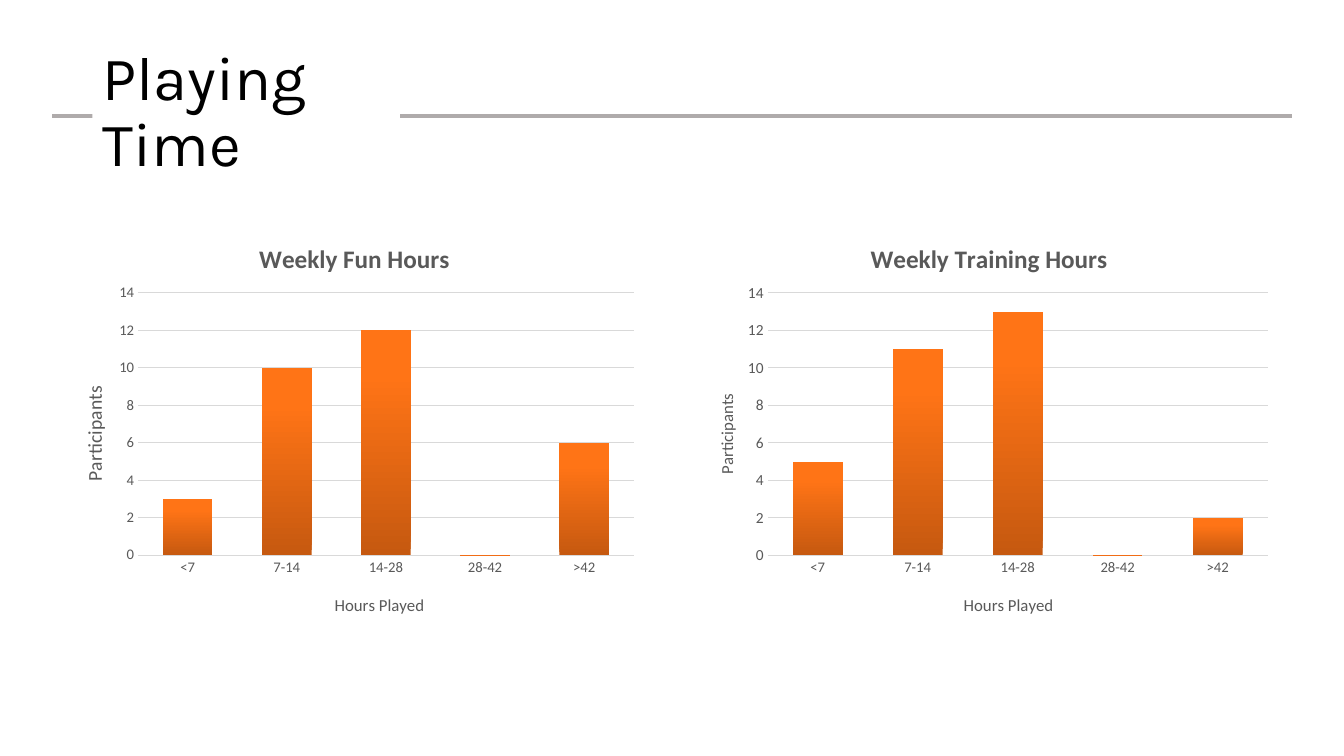
from pptx import Presentation
from pptx.chart.data import CategoryChartData
from pptx.dml.color import RGBColor
from pptx.enum.chart import XL_CHART_TYPE as ChartType, XL_TICK_MARK as TickMark
from pptx.enum.shapes import MSO_CONNECTOR as Connector
from pptx.enum.text import MSO_ANCHOR as Anchor, MSO_AUTO_SIZE as AutoSize, PP_ALIGN as Align
from pptx.oxml import parse_xml
from pptx.oxml.ns import nsdecls, qn
from pptx.util import Pt

GREY = "595959"
GRID = "D9D9D9"
HOURS = ["<7", "7-14", "14-28", "28-42", ">42"]
BAR_STOPS = [(0, "C65910"), (80, "FF7416"), (100, "FF7517")]


def color(hex_text):
    return RGBColor.from_string(hex_text)


def style_font(font, size, hex_text, name="Calibri", bold=False):
    font.name, font.size, font.bold = name, Pt(size), bold
    font.color.rgb = color(hex_text)


def layout_xml(x, y, width=None, height=None):
    """Manual chart layout, in fractions of the chart's size."""
    target = '<c:layoutTarget val="inner"/>' if width else ""
    values = [("x", x), ("y", y), ("w", width), ("h", height)]
    sizes = "".join(f'<c:{key} val="{value}"/>' for key, value in values if value is not None)
    modes = '<c:xMode val="edge"/><c:yMode val="edge"/>'
    return parse_xml(f'<c:layout {nsdecls("c")}><c:manualLayout>{target}{modes}{sizes}'
                     '</c:manualLayout></c:layout>')


def remove_layout(element):
    old = element.find(qn("c:layout"))
    if old is not None:
        element.remove(old)


def set_chart_text(title, text, size, place, bold=False):
    title.text_frame.text = text
    style_font(title.text_frame.paragraphs[0].font, size, GREY, bold=bold)
    element = title.text_frame._txBody.getparent().getparent()
    remove_layout(element)
    element.find(qn("c:tx")).addnext(layout_xml(*place))


def fill_bars(series):
    stops = "".join(f'<a:gs pos="{pos * 1000}"><a:srgbClr val="{hex_text}"/></a:gs>'
                    for pos, hex_text in BAR_STOPS)
    series.invert_if_negative = False
    series._element.get_or_add_spPr().append(parse_xml(
        f'<a:gradFill {nsdecls("a")}><a:gsLst>{stops}</a:gsLst>'
        '<a:lin ang="16200000" scaled="0"/></a:gradFill>'))


def add_title(slide, text):
    title = slide.shapes.title
    title.left, title.top, title.width, title.height = Pt(66), Pt(28.8), Pt(219.6), Pt(104.4)
    title.fill.solid()
    title.fill.fore_color.rgb = color("FFFFFF")
    frame = title.text_frame
    frame.text = text
    frame.word_wrap = True
    frame.auto_size = AutoSize.NONE
    frame.vertical_anchor = Anchor.MIDDLE
    paragraph = frame.paragraphs[0]
    paragraph.alignment = Align.LEFT
    paragraph.line_spacing = 0.9
    style_font(paragraph.font, 44, "000000", "Karla")


def add_rule_behind_title(slide):
    rule = slide.shapes.add_connector(Connector.STRAIGHT, Pt(37.4), Pt(82.8), Pt(923), Pt(82.8))
    rule.line.color.rgb = color("AFABAB")
    rule.line.width = Pt(3)
    rule.element.spPr.append(parse_xml(f'<a:effectLst {nsdecls("a")}/>'))
    slide.shapes.title.element.addprevious(rule.element)


def add_hours_chart(slide, left, title, counts, title_at, plot_at,
                    hours_at, people_at, people_size, value_size):
    data = CategoryChartData(number_format="###0")
    data.categories = HOURS
    data.add_series("Series 1", counts)
    chart = slide.shapes.add_chart(ChartType.COLUMN_CLUSTERED, Pt(left), Pt(154),
                                   Pt(422.6), Pt(297.4), data).chart
    style_font(chart.font, 10, "000000")
    chart.has_legend = False
    set_chart_text(chart.chart_title, title, 18, title_at, bold=True)

    # Plot area and bars
    plot = chart.plots[0]
    plot.gap_width, plot.overlap, plot.vary_by_categories = 100, -24, False
    fill_bars(plot.series[0])
    plot_area = chart.element.find(".//" + qn("c:plotArea"))
    remove_layout(plot_area)
    plot_area.insert(0, layout_xml(*plot_at))

    # Axes
    hours, people = chart.category_axis, chart.value_axis
    set_chart_text(hours.axis_title, "Hours Played", 12, hours_at)
    set_chart_text(people.axis_title, "Participants", people_size, people_at)
    for axis, size in ((hours, 10.5), (people, value_size)):
        axis.major_tick_mark = axis.minor_tick_mark = TickMark.NONE
        style_font(axis.tick_labels.font, size, GREY)
    hours.format.line.color.rgb = color(GRID)
    hours.format.line.width = Pt(1)
    people.format.line.fill.background()
    people.minimum_scale, people.maximum_scale, people.major_unit = 0, 14, 2
    people.major_gridlines.format.line.color.rgb = color(GRID)
    people.major_gridlines.format.line.width = Pt(0.75)
    people.tick_labels.number_format = "###0"
    people.tick_labels.number_format_is_linked = False


def main():
    presentation = Presentation()
    presentation.slide_width, presentation.slide_height = Pt(960), Pt(540)
    slide = presentation.slides.add_slide(presentation.slide_layouts[5])

    # Heading
    add_title(slide, "Playing Time")
    add_rule_behind_title(slide)

    # Charts
    add_hours_chart(slide, 38.2, "Weekly Fun Hours", (3, 10, 12, 0, 6),
                    title_at=(0.34, 0.05), plot_at=(0.143, 0.186, 0.838, 0.63),
                    hours_at=(0.47, 0.9), people_at=(0.04, 0.4),
                    people_size=14, value_size=10.5)
    add_hours_chart(slide, 491.8, "Weekly Training Hours", (5, 11, 13, 0, 2),
                    title_at=(0.3, 0.05), plot_at=(0.134, 0.186, 0.845, 0.63),
                    hours_at=(0.46, 0.9), people_at=(0.04, 0.42),
                    people_size=12, value_size=11)

    presentation.save("out.pptx")


if __name__ == "__main__":
    main()
